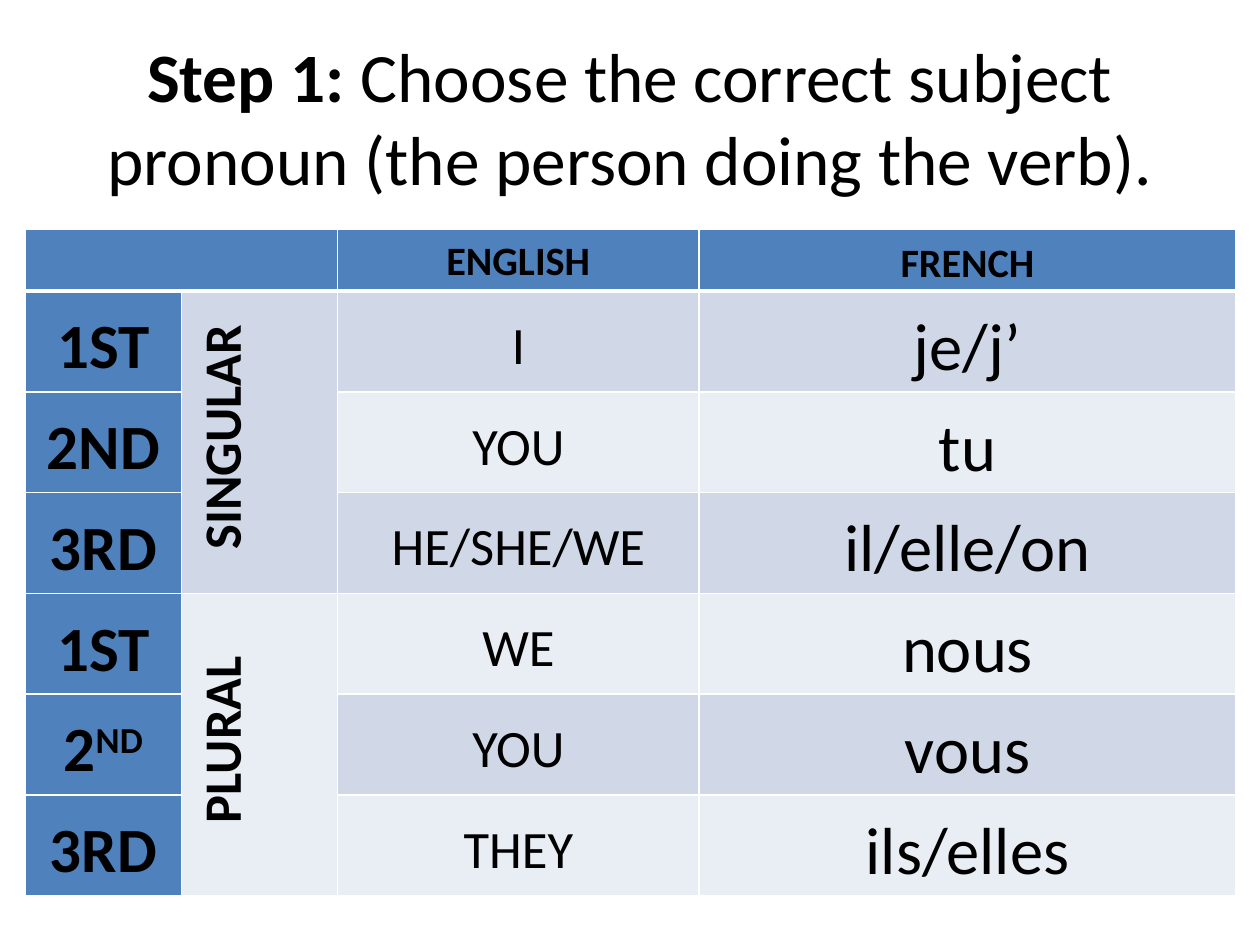
"""Build a slide with a table of English and French subject pronouns."""
import dataclasses

import pptx
import pptx.dml.color
import pptx.enum.text
import pptx.oxml
import pptx.oxml.ns
import pptx.util

Inches = pptx.util.Inches
Pt = pptx.util.Pt


@dataclasses.dataclass(frozen=True)
class Theme:
    font: str = "Calibri"
    ink: str = "000000"
    line: str = "FFFFFF"
    accent: str = "4F81BD"
    bands: tuple = ("D0D8E8", "E9EDF4")
    title: float = 39.6
    header: float = 23
    person: float = 36
    english: float = 30
    french: float = 38


theme = Theme()


def style_run(run, size, bold):
    run.font.name = theme.font
    run.font.size = Pt(size)
    run.font.bold = bold
    run.font.color.rgb = pptx.dml.color.RGBColor.from_string(theme.ink)


def fill_cell(cell, words, size, bold, color, top=1, bottom=1):
    properties = cell._tc.get_or_add_tcPr()
    for side, width in (("L", 1), ("R", 1), ("T", top), ("B", bottom)):
        properties.append(pptx.oxml.parse_xml(
            f'<a:ln{side} {pptx.oxml.ns.nsdecls("a")} w="{Pt(width)}"><a:solidFill>'
            f'<a:srgbClr val="{theme.line}"/></a:solidFill></a:ln{side}>'))
    cell.fill.solid()
    cell.fill.fore_color.rgb = pptx.dml.color.RGBColor.from_string(color)
    if not words:
        return
    cell.margin_left = cell.margin_right = Inches(0.07)
    cell.margin_top = cell.margin_bottom = 0
    cell.vertical_anchor = pptx.enum.text.MSO_ANCHOR.MIDDLE
    paragraph = cell.text_frame.paragraphs[0]
    paragraph.alignment = pptx.enum.text.PP_ALIGN.CENTER
    paragraph.line_spacing = 1.15
    for word in words:
        run = paragraph.add_run()
        run.text = word
        style_run(run, size, bold)


deck = pptx.Presentation()
deck.slide_width = Inches(10)
deck.slide_height = Inches(7.5)
slide = deck.slides.add_slide(deck.slide_layouts[6])

heading = slide.shapes.add_textbox(Inches(0.5), Inches(0.3), Inches(9), Inches(1.25)).text_frame
heading.word_wrap = True
heading.vertical_anchor = pptx.enum.text.MSO_ANCHOR.MIDDLE
instruction = heading.paragraphs[0]
instruction.alignment = pptx.enum.text.PP_ALIGN.CENTER
for words, bold in (
    ("Step 1:", True),
    (" Choose the correct subject pronoun (the person doing the verb).", False),
):
    run = instruction.add_run()
    run.text = words
    style_run(run, theme.title, bold)

pronouns = [
    (["1ST"], "I", "je/j’"),
    (["2ND"], "YOU", "tu"),
    (["3RD"], "HE/SHE/WE", "il/elle/on"),
    (["1ST"], "WE", "nous"),
    (["2", "ND"], "YOU", "vous"),
    (["3RD"], "THEY", "ils/elles"),
]
numbers = {1: "SINGULAR", 4: "PLURAL"}

table = slide.shapes.add_table(
    len(pronouns) + 1, 4, Inches(0.2), Inches(1.82), Inches(9.61), Inches(5.32)).table
for column, width in zip(table.columns, (1.24, 1.24, 2.87, 4.26)):
    column.width = Inches(width)
for index, row in enumerate(table.rows):
    row.height = Inches(0.8 if index else 0.49)

table.cell(0, 0).merge(table.cell(0, 1))
for start in numbers:
    table.cell(start, 1).merge(table.cell(start + 2, 1))

for column, label in enumerate(([], [], ["ENGLISH"], ["FRENCH"])):
    fill_cell(table.cell(0, column), label, theme.header, True, theme.accent, bottom=3)
table.cell(0, 2).vertical_anchor = pptx.enum.text.MSO_ANCHOR.TOP

for index, (person, english, french) in enumerate(pronouns, start=1):
    top = 3 if index == 1 else 1
    band = theme.bands[(index - 1) % 2]
    number = [numbers[index]] if index in numbers else []
    number_band = theme.bands[(index - 1) // 3]
    fill_cell(table.cell(index, 0), person, theme.person, True, theme.accent, top)
    fill_cell(table.cell(index, 1), number, theme.english, True, number_band, top)
    fill_cell(table.cell(index, 2), [english], theme.english, False, band, top)
    fill_cell(table.cell(index, 3), [french], theme.french, False, band, top)
    if number:
        number_cell = table.cell(index, 1)
        number_cell._tc.get_or_add_tcPr().set("vert", "vert270")
        number_paragraph = number_cell.text_frame.paragraphs[0]
        number_paragraph._p.get_or_add_pPr().set("marL", str(Inches(0.08)))
    for suffix in table.cell(index, 0).text_frame.paragraphs[0].runs[1:]:
        suffix.font._element.set("baseline", "30000")

deck.save("out.pptx")
